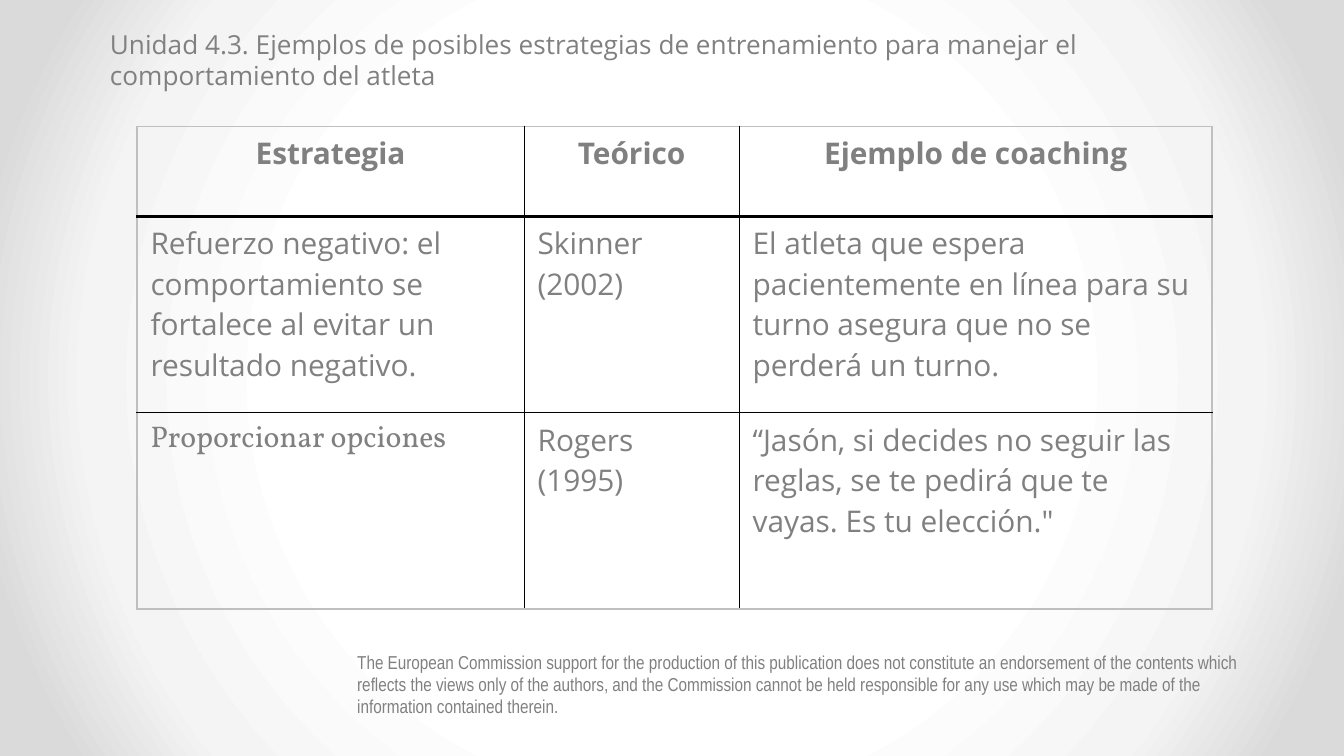
import pptx
import pptx.util
import pptx.dml.color
import pptx.enum.text
import pptx.oxml.ns
from lxml import etree

Inches, Pt = pptx.util.Inches, pptx.util.Pt
qn = pptx.oxml.ns.qn

HUES = {"text": "808080", "rule": "000000", "frame": "BFBFBF",
        "mid": "FFFFFF", "ring": "F4F4F4", "edge": "DADADA"}
STOPS = [(50, "mid"), (76, "ring"), (92, "edge")]

TITLE = ("Unidad 4.3. Ejemplos de posibles estrategias de entrenamiento "
         "para manejar el comportamiento del atleta")
NOTICE = ("The European Commission support for the production of this publication "
          "does not constitute an endorsement of the contents which reflects the views "
          "only of the authors, and the Commission cannot be held responsible for any "
          "use which may be made of the information contained therein.")
ROWS = [
    ["Estrategia", "Teórico", "Ejemplo de coaching"],
    ["Refuerzo negativo: el comportamiento se fortalece al evitar un resultado negativo.",
     "Skinner (2002)",
     "El atleta que espera pacientemente en línea para su turno asegura que no se "
     "perderá un turno."],
    ["Proporcionar opciones",
     "Rogers (1995)",
     "“Jasón, si decides no seguir las reglas, se te pedirá que te vayas. "
     "Es tu elección.\""],
]
WIDTHS = [0.36, 0.2, 0.44]
HEIGHTS = [0.67, 1.46, 1.46]


def node(parent, tag, **attrs):
    return etree.SubElement(parent, qn(tag), {k: str(v) for k, v in attrs.items()})


def write(frame, text, form):
    para = frame.paragraphs[0]
    run = para.add_run()
    run.text = text
    for key, value in form.items():
        setattr(run.font, key, value)
    run.font.color.rgb = pptx.dml.color.RGBColor.from_string(HUES["text"])
    return para


def backdrop(slide):
    """Fill the background with a gradient that darkens away from the centre."""
    slide.background.fill.gradient()
    grad = slide.element.xpath(".//p:bgPr/a:gradFill")[0]
    for child in list(grad):
        grad.remove(child)
    stops = node(grad, "a:gsLst")
    for spot, hue in STOPS:
        stop = node(stops, "a:gs", pos=spot * 1000)
        node(stop, "a:srgbClr", val=HUES[hue])
    ring = node(grad, "a:path", path="circle")
    node(ring, "a:fillToRect", l=50000, t=50000, r=50000, b=50000)


def note(slide, box, text, form):
    """Place a wrapped block of text in the box."""
    frame = slide.shapes.add_textbox(*map(Inches, box)).text_frame
    frame.word_wrap = True
    write(frame, text, form)


def edge(cell, sides):
    """Draw the cell's borders from side: (hue, width in points)."""
    props = cell._tc.get_or_add_tcPr()
    for spot, (side, (hue, width)) in enumerate(sides.items()):
        line = node(props, f"a:ln{side}", w=Pt(width))
        node(node(line, "a:solidFill"), "a:srgbClr", val=HUES[hue])
        props.insert(spot, line)


def grid(slide, box):
    """Place the table of strategies in the box."""
    last, end = len(ROWS) - 1, len(WIDTHS) - 1
    table = slide.shapes.add_table(last + 1, end + 1, *map(Inches, box)).table
    table.horz_banding = False
    for col, share in zip(table.columns, WIDTHS):
        col.width = Inches(box[2] * share)
    for row, height in zip(table.rows, HEIGHTS):
        row.height = Inches(height)

    frame, rule, head = ("frame", 1), ("rule", 0.75), ("rule", 1.5)
    levels = [frame, head, rule, frame]
    for r, texts in enumerate(ROWS):
        for c, text in enumerate(texts):
            cell = table.cell(r, c)
            cell.fill.background()
            serif = (r, c) == (last, 0)
            para = write(cell.text_frame, text, {
                "name": "Vollkorn" if serif else "Open Sans",
                "size": Pt(16), "bold": r == 0})
            if r == 0:
                para.alignment = pptx.enum.text.PP_ALIGN.CENTER
            edge(cell, {"L": frame if c == 0 else rule,
                        "R": frame if c == end else rule,
                        "T": levels[r], "B": levels[r + 1]})


def main():
    deck = pptx.Presentation()
    deck.slide_width = Inches(10)
    deck.slide_height = deck.slide_width * 9 // 16
    slide = deck.slides.add_slide(deck.slide_layouts[6])
    backdrop(slide)
    note(slide, (2.56, 4.79, 6.93, 0.67), NOTICE,
         {"name": "Arial Narrow", "size": Pt(10)})
    grid(slide, (1.02, 0.94, 8, sum(HEIGHTS)))
    note(slide, (0.72, 0.16, 8.5, 0.57), TITLE,
         {"name": "Open Sans", "size": Pt(14)})
    deck.save("out.pptx")


if __name__ == "__main__":
    main()
